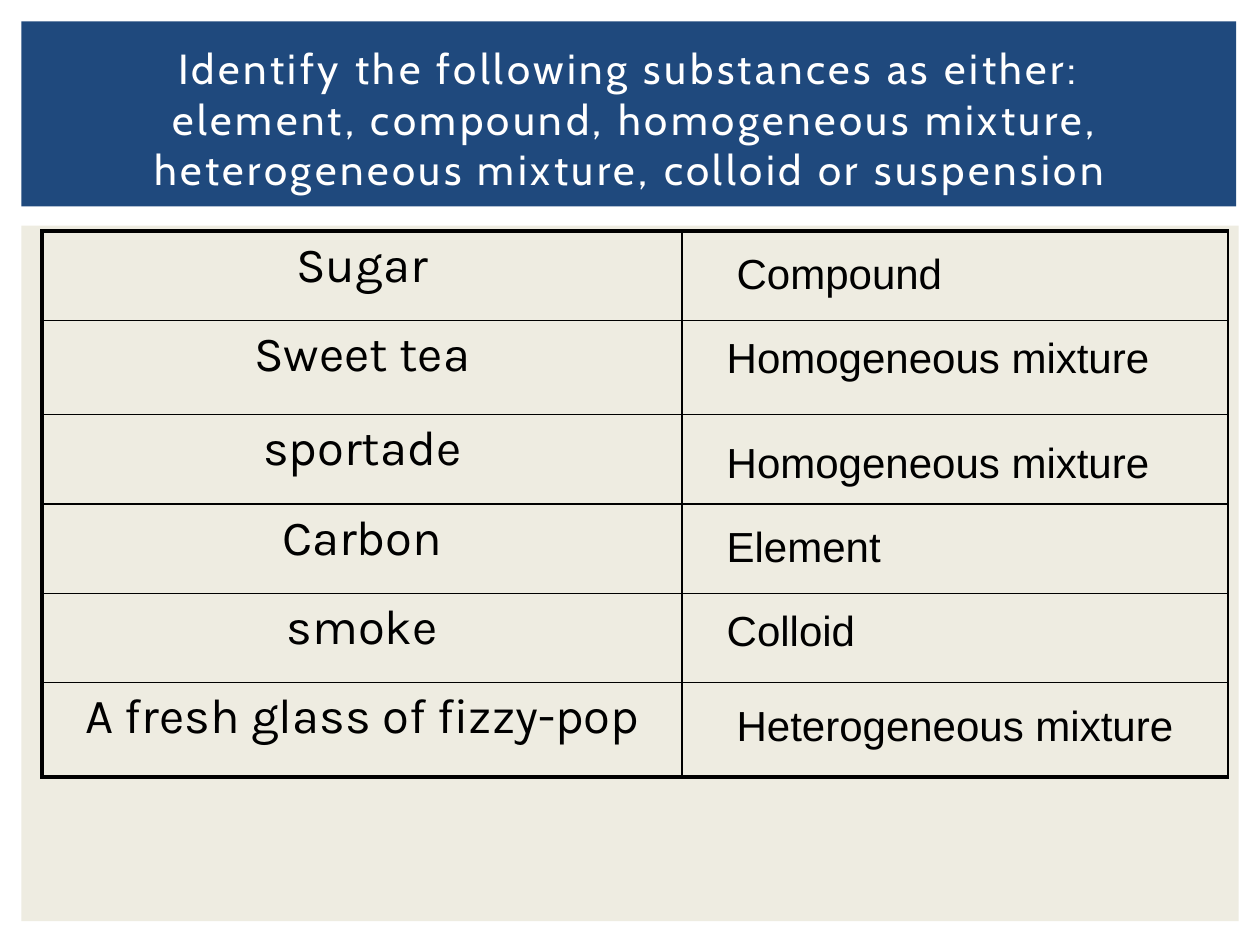
from lxml import etree
from pptx import Presentation
from pptx.dml.color import RGBColor
from pptx.enum.shapes import MSO_SHAPE
from pptx.enum.text import MSO_ANCHOR, MSO_AUTO_SIZE, PP_ALIGN
from pptx.oxml.ns import qn
from pptx.util import Cm, Pt

RECTANGLE = MSO_SHAPE.RECTANGLE
MIDDLE = MSO_ANCHOR.MIDDLE
CENTER = PP_ALIGN.CENTER
FIT_SHAPE = MSO_AUTO_SIZE.SHAPE_TO_FIT_TEXT

BLUE, CREAM, BLACK, WHITE = "1F497D", "EEECE1", "000000", "FFFFFF"
THIN, THICK = 1, 2.25

TITLE_LINES = [
    "Identify the following substances as either:",
    " element, compound, homogeneous mixture, "
    "heterogeneous mixture, colloid or suspension",
]

# substance, row height, answer, answer left, top and width (cm)
ROWS = [
    ("Sugar", 1.8, "Compound", 14.6, 4.87, 4.75),
    ("Sweet tea", 1.9, "Homogeneous mixture", 14.4, 6.56, 9.2),
    ("sportade", 1.8, "Homogeneous mixture", 14.4, 8.68, 9.2),
    ("Carbon", 1.8, "Element", 14.4, 10.37, 3.75),
    ("smoke", 1.8, "Colloid", 14.4, 12.06, 3.2),
    ("A fresh glass of fizzy-pop", 1.9,
     "Heterogeneous mixture", 14.6, 13.97, 9.45),
]
COLUMN_WIDTHS = [12.9, 11]


def color(hex_code):
    return RGBColor.from_string(hex_code)


def add_panel(page, left, top, width, height, fill):
    panel = page.shapes.add_shape(
        RECTANGLE, Cm(left), Cm(top), Cm(width), Cm(height))
    panel.shadow.inherit = False
    panel.fill.solid()
    panel.fill.fore_color.rgb = color(fill)
    panel.line.fill.background()


def add_span(para, text, font, size, ink):
    span = para.add_run()
    span.text = text
    span.font.name = font
    span.font.size = Pt(size)
    span.font.color.rgb = color(ink)
    return span


def add_title(page):
    box = page.shapes.add_textbox(Cm(1.06), Cm(0.85), Cm(23.28), Cm(3.07))
    frame = box.text_frame
    frame.word_wrap = True
    frame.vertical_anchor = MIDDLE
    para = frame.paragraphs[0]
    para.alignment = CENTER
    for index, line in enumerate(TITLE_LINES):
        if index:
            para.add_line_break()
        span = add_span(para, line, "Cabin", 24, WHITE)
        span.font._element.set("spc", "200")  # letter spacing of 2 pt


def set_borders(cell, **widths):
    properties = cell._tc.get_or_add_tcPr()
    for position, side in enumerate(("L", "R", "T", "B")):
        line = etree.Element(qn(f"a:ln{side}"), w=str(Pt(widths[side])))
        fill = etree.SubElement(line, qn("a:solidFill"))
        etree.SubElement(fill, qn("a:srgbClr"), val=BLACK)
        properties.insert(position, line)


def add_substance_table(page):
    total_height = sum(row[1] for row in ROWS)
    table = page.shapes.add_table(
        len(ROWS), len(COLUMN_WIDTHS), Cm(0.85), Cm(4.66),
        Cm(sum(COLUMN_WIDTHS)), Cm(total_height)).table
    table.first_row = table.horz_banding = False
    for column, width in zip(table.columns, COLUMN_WIDTHS):
        column.width = Cm(width)

    last = len(ROWS) - 1
    for index, (substance, height, *_) in enumerate(ROWS):
        table.rows[index].height = Cm(height)
        for column in range(len(COLUMN_WIDTHS)):
            cell = table.cell(index, column)
            cell.fill.background()
            set_borders(
                cell,
                L=THIN if column else THICK,
                R=THIN,
                T=THIN if index else THICK,
                B=THICK if index == last else THIN)
        para = table.cell(index, 0).text_frame.paragraphs[0]
        para.alignment = CENTER
        add_span(para, substance, "Karla", 28, BLACK)


def add_answer(page, text, left, top, width):
    box = page.shapes.add_textbox(Cm(left), Cm(top), Cm(width), Cm(1.27))
    frame = box.text_frame
    frame.word_wrap = False
    frame.auto_size = FIT_SHAPE
    add_span(frame.paragraphs[0], text, "Arial", 24, BLACK)


def main():
    deck = Presentation()
    deck.slide_width, deck.slide_height = Cm(25.4), Cm(19.05)
    page = deck.slides.add_slide(deck.slide_layouts[6])

    # Background panels and title
    add_panel(page, 0.43, 4.55, 24.54, 14.02, CREAM)
    add_panel(page, 0.43, 0.43, 24.49, 3.73, BLUE)
    add_title(page)

    # Substances with their answers
    add_substance_table(page)
    for _, _, answer, left, top, width in ROWS:
        add_answer(page, answer, left, top, width)

    deck.save("out.pptx")


if __name__ == "__main__":
    main()
